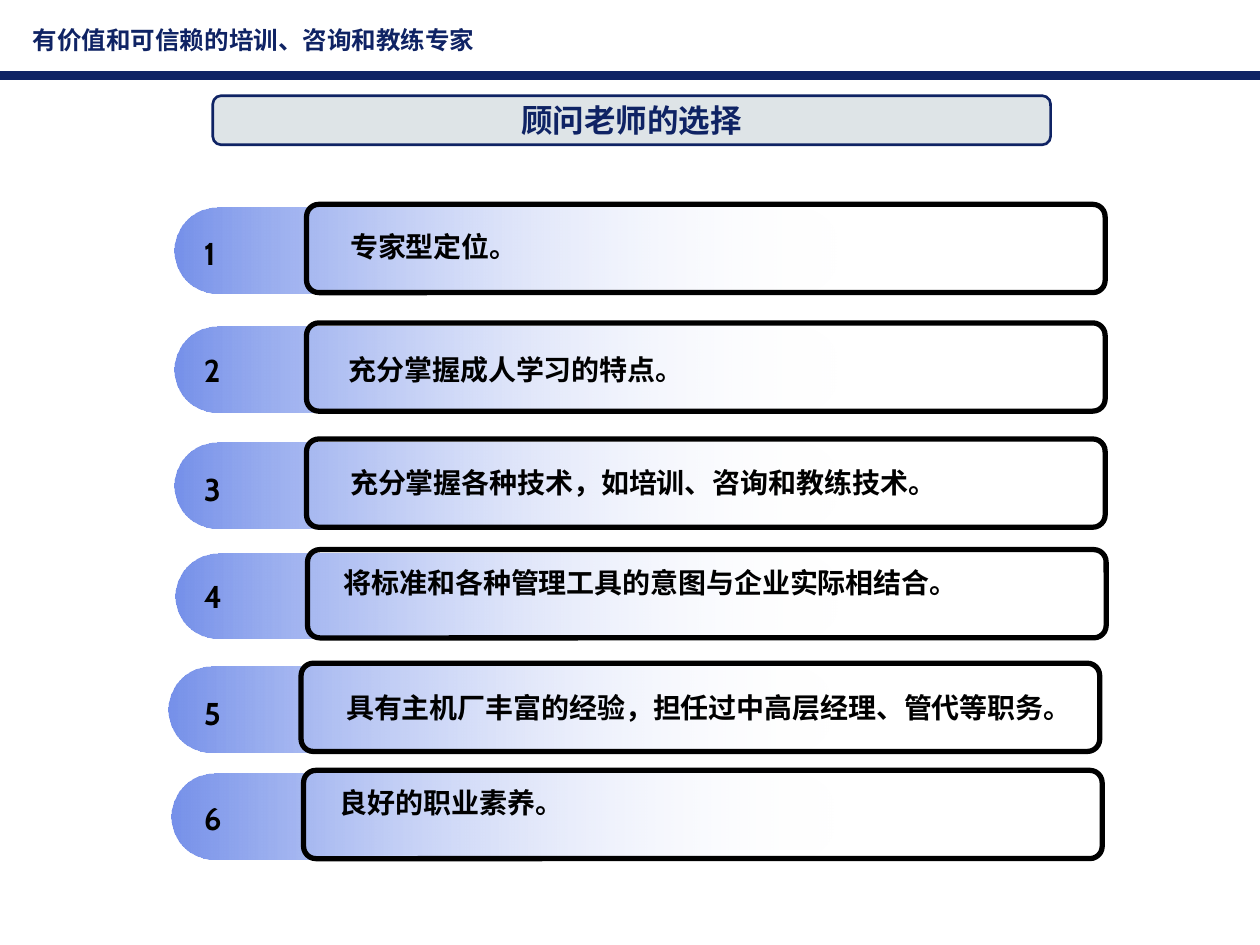
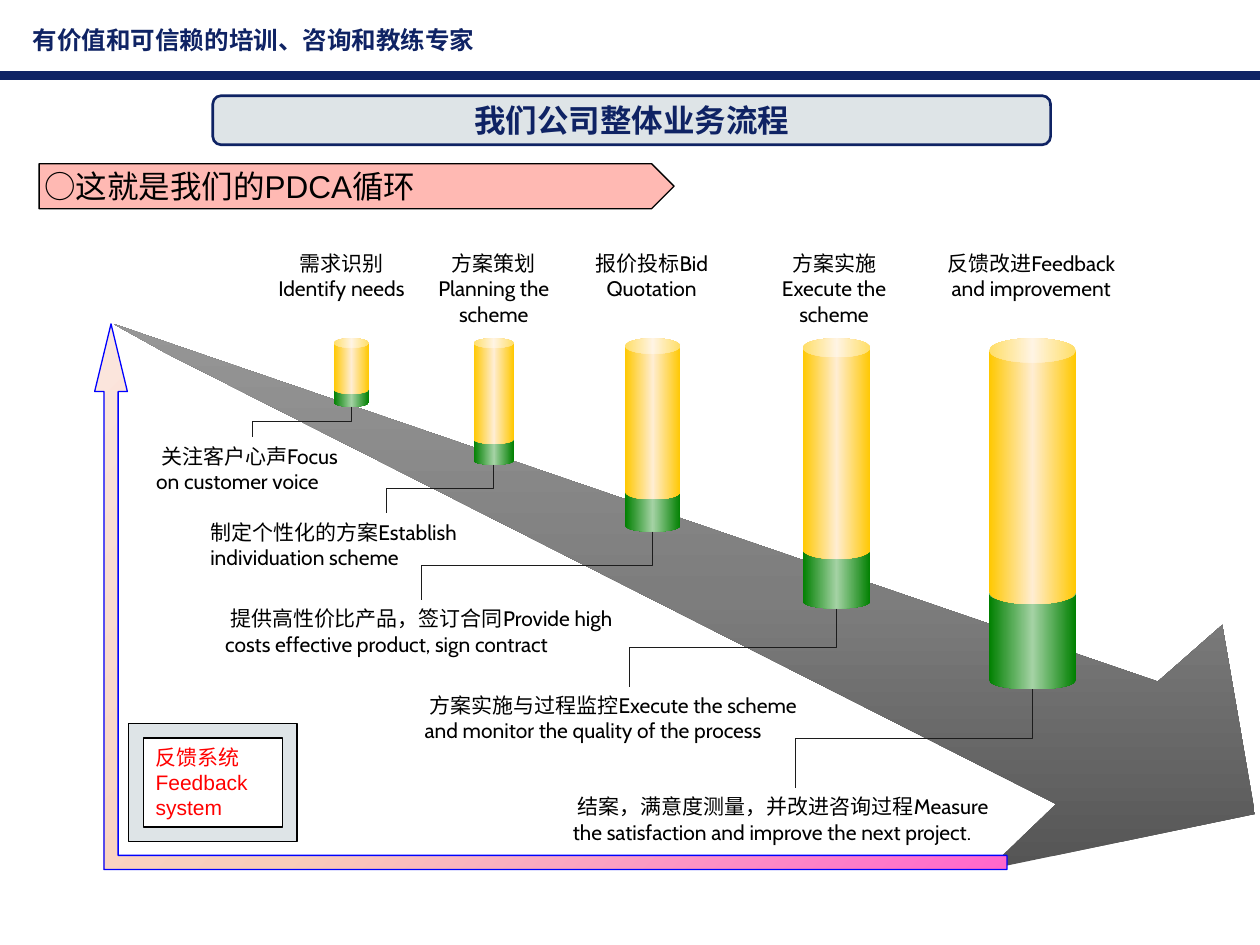
from typing import NamedTuple

from pptx import Presentation
from pptx.dml.color import RGBColor
from pptx.enum.shapes import MSO_CONNECTOR as CONN, MSO_SHAPE as SHAPE
from pptx.enum.text import MSO_ANCHOR as ANCHOR, PP_ALIGN as ALIGN
from pptx.oxml import parse_xml
from pptx.oxml.ns import nsdecls, qn
from pptx.util import Cm, Pt

COLORS = {
    "navy": "0F2364", "black": "000000", "white": "FFFFFF", "red": "FF0000",
    "blue": "0000FF", "panel": "DEE4E7", "salmon": "FFB9B3", "wire": "1C1C1C",
    "pill": "7691EA", "green": "008000", "mint": "A4D2A4",
    "gold": "FFC800", "cream": "FFEDD2", "dark": "555555", "mid": "7D7D7D",
    "light": "969696", "pink": "FF66CC", "peach": "F8CDBA", "blush": "FBE6DE",
}
CJK = "Noto Sans CJK SC"
PILL_SIZE = (13.41, 1.73)
FRAME_SIZE = (16.1, 1.78)
FRAME_OFFSET = (2.67, -0.07)
NUMBER_LEFT = 3.86
HEADING_TOP = 4.93
CAN_TOP = 6.82
NOTE_HEIGHT = 1.3


class Gradient(NamedTuple):
    stops: tuple[str, ...]
    angle: int | None = 0
    fade: bool = False


class Choice(NamedTuple):
    text: str
    left: float
    top: float
    text_left: float
    text_top: float
    number_top: float


class Step(NamedTuple):
    heading: str
    heading_left: float
    heading_width: float
    left: float
    width: float
    gold_height: float
    gold_adj: float
    green_top: float
    green_height: float
    green_adj: float
    note: str
    note_left: float
    note_top: float
    note_width: float
    note_indent: float = 0.1


PILL = Gradient(("pill", "white"), fade=True)
GREEN = Gradient(("green", "mint", "green"))
GOLD = Gradient(("gold", "cream", "gold"))
ROAD = Gradient(("dark", "mid", "light"), 270)
FEEDBACK = Gradient(("pink", "peach", "blush"), None)

CHOICES = [
    Choice("专家型定位。", 3.51, 4.19, 6.81, 4.5, 4.6),
    Choice("充分掌握成人学习的特点。", 3.51, 6.58, 6.78, 6.99, 6.96),
    Choice("充分掌握各种技术，如培训、咨询和教练技术。", 3.51, 8.92, 6.81, 9.27, 9.35),
    Choice("将标准和各种管理工具的意图与企业实际相结合。", 3.53, 11.15, 6.68, 11.28, 11.51),
    Choice("具有主机厂丰富的经验，担任过中高层经理、管代等职务。", 3.4, 13.44, 6.73, 13.79, 13.87),
    Choice("良好的职业素养。", 3.45, 15.6, 6.6, 15.72, 15.98),
]

STEPS = [
    Step("需求识别Identify needs", 5.31, 3.15, 6.73, 0.71, 1.12, 0.27, 7.77, 0.43, 0.4,
         "关注客户心声Focus on customer voice", 2.9, 8.81, 4.39),
    Step("方案策划Planning the scheme", 8.43, 3.05, 9.55, 0.81, 2.13, 0.24, 8.79, 0.58, 0.27,
         "制定个性化的方案Establish individuation scheme", 3.99, 10.34, 7.59, 0),
    Step("报价投标Bid Quotation", 11.73, 2.82, 12.6, 1.12, 3.25, 0.28, 9.75, 0.97, 0.25,
         "提供高性价比产品，签订合同Provide high costs effective product, sign contract",
         4.29, 12.09, 8.41),
    Step("方案实施Execute the scheme", 15.14, 3.35, 16.18, 1.37, 4.45, 0.28, 10.95, 1.32, 0.22,
         "方案实施与过程监控Execute the scheme and monitor the quality of the process",
         8.31, 13.84, 8.76),
    Step("反馈改进Feedback and improvement", 18.49, 4.6, 19.94, 1.75, 5.36, 0.28, 11.79, 2.11, 0.21,
         "结案，满意度测量，并改进咨询过程Measure the satisfaction and improve the next project.",
         11.3, 15.88, 9.47),
]

ROAD_POINTS = [
    (4.5, 7.29), (2.29, 6.53), (3.33, 7.11), (21.29, 16.21),
    (19.91, 17.53), (25.3, 16.41), (24.64, 12.6), (23.34, 13.74),
]


def rgb(name: str) -> RGBColor:
    return RGBColor.from_string(COLORS[name])


def apply_gradient(sp, grad: Gradient) -> None:
    last = len(grad.stops) - 1
    stops = ""
    for i, name in enumerate(grad.stops):
        alpha = '<a:alpha val="0"/>' if grad.fade and i == last else ""
        stops += (f'<a:gs pos="{i * 100000 // last}">'
                  f'<a:srgbClr val="{COLORS[name]}">{alpha}</a:srgbClr></a:gs>')
    if grad.angle is None:
        shade = '<a:path path="circle"><a:fillToRect l="100000" t="100000"/></a:path>'
    else:
        shade = f'<a:lin ang="{grad.angle * 60000}" scaled="0"/>'
    sp.fill.background()
    spPr = sp.element.spPr
    spPr.replace(spPr.find(qn("a:noFill")), parse_xml(
        f'<a:gradFill {nsdecls("a")} rotWithShape="1"><a:gsLst>{stops}</a:gsLst>{shade}</a:gradFill>'))


def style(sp, fill: str | Gradient | None, line: str | None = None, weight: float = 0.75) -> None:
    sp.shadow.inherit = False
    if isinstance(fill, Gradient):
        apply_gradient(sp, fill)
    elif fill:
        sp.fill.solid()
        sp.fill.fore_color.rgb = rgb(fill)
    else:
        sp.fill.background()
    if line:
        sp.line.color.rgb = rgb(line)
        sp.line.width = Pt(weight)
    else:
        sp.line.fill.background()


def add_preset(s, kind, left: float, top: float, width: float, height: float,
               fill=None, line: str | None = None, weight: float = 0.75, adj: tuple = ()):
    sp = s.shapes.add_shape(kind, Cm(left), Cm(top), Cm(width), Cm(height))
    for i, value in enumerate(adj):
        sp.adjustments[i] = value
    style(sp, fill, line, weight)
    return sp


def write(sp, text: str, *, size: float, font: str = "Cabin", color: str = "black",
          bold: bool = False, align=ALIGN.LEFT, anchor=ANCHOR.TOP,
          indent: float = 0, tight: bool = False) -> None:
    tf = sp.text_frame
    tf.word_wrap = True
    tf.vertical_anchor = anchor
    if tight:
        tf.margin_left = tf.margin_right = Cm(0.1)
    p = tf.paragraphs[0]
    p.alignment = align
    if indent:
        p._p.get_or_add_pPr().set("indent", str(Cm(indent)))
    r = p.add_run()
    r.text = text
    r.font.size = Pt(size)
    r.font.bold = bold
    r.font.name = font
    r.font.color.rgb = rgb(color)
    ea = parse_xml(f'<a:ea {nsdecls("a")} typeface="{CJK}"/>')
    r.font._element.find(qn("a:latin")).addnext(ea)


def add_text(s, text: str, left: float, top: float, width: float, height: float, **fmt) -> None:
    write(s.shapes.add_textbox(Cm(left), Cm(top), Cm(width), Cm(height)), text, **fmt)


def add_line(s, kind, x1: float, y1: float, x2: float, y2: float, color: str, weight: float):
    c = s.shapes.add_connector(kind, Cm(x1), Cm(y1), Cm(x2), Cm(y2))
    c.line.color.rgb = rgb(color)
    c.line.width = Pt(weight)
    c.element.spPr.append(parse_xml(f'<a:effectLst {nsdecls("a")}/>'))
    return c


def add_drop(s, x1: float, y1: float, x2: float, y2: float) -> None:
    mid_x, mid_y = (x1 + x2) / 2, (y1 + y2) / 2
    half_w, half_h = (y2 - y1) / 2, (x1 - x2) / 2
    c = add_line(s, CONN.ELBOW, mid_x - half_w, mid_y - half_h,
                 mid_x + half_w, mid_y + half_h, "wire", 0.75)
    c.element.spPr.find(qn("a:xfrm")).set("rot", str(90 * 60000))


def new_slide(prs):
    s = prs.slides.add_slide(prs.slide_layouts[6])
    add_line(s, CONN.STRAIGHT, 0, 1.52, 25.4, 1.52, "navy", 5)
    add_text(s, "有价值和可信赖的培训、咨询和教练专家", 0.41, 0.38, 9.5, 0.86,
             size=14, font="Arial", color="navy", bold=True)
    return s


def add_title(s, text: str) -> None:
    sp = add_preset(s, SHAPE.ROUNDED_RECTANGLE, 4.29, 1.93, 16.89, 0.99,
                    "panel", "navy", 1.5, (0.17,))
    write(sp, text, size=18, font=CJK, color="navy", bold=True,
          align=ALIGN.CENTER, anchor=ANCHOR.MIDDLE, tight=True)


def build_choices(prs) -> None:
    s = new_slide(prs)
    for number, c in enumerate(CHOICES, 1):
        add_preset(s, SHAPE.ROUNDED_RECTANGLE, c.left, c.top, *PILL_SIZE, PILL, adj=(0.5,))
        add_text(s, c.text, c.text_left, c.text_top, 15.5, 0.94, size=16, bold=True)
        add_preset(s, SHAPE.ROUNDED_RECTANGLE, c.left + FRAME_OFFSET[0], c.top + FRAME_OFFSET[1],
                   *FRAME_SIZE, line="black", weight=3, adj=(0.14,))
        add_text(s, str(number), NUMBER_LEFT, c.number_top, 0.9, 0.94, size=18, bold=True)
    add_title(s, "顾问老师的选择")


def build_process(prs) -> None:
    s = new_slide(prs)
    points = [(Cm(x), Cm(y)) for x, y in ROAD_POINTS]
    road = s.shapes.build_freeform(*points[0])
    road.add_line_segments(points[1:], close=True)
    style(road.convert_to_shape(), ROAD)

    for st in STEPS:
        add_preset(s, SHAPE.CAN, st.left, st.green_top, st.width, st.green_height,
                   GREEN, adj=(st.green_adj,))
        add_text(s, st.heading, st.heading_left, HEADING_TOP, st.heading_width, 1.8,
                 size=12, align=ALIGN.CENTER)
        add_text(s, st.note, st.note_left, st.note_top, st.note_width, NOTE_HEIGHT,
                 size=12, indent=st.note_indent)
        add_drop(s, st.left + st.width / 2, st.green_top + st.green_height,
                 st.note_left + st.note_width / 2, st.note_top)
        add_preset(s, SHAPE.CAN, st.left, CAN_TOP, st.width, st.gold_height,
                   GOLD, adj=(st.gold_adj,))

    loop = add_preset(s, SHAPE.BENT_UP_ARROW, 1.91, 6.53, 18.39, 11,
                      FEEDBACK, "blue", adj=(0.026, 0.03, 0.124))
    loop.element.spPr.find(qn("a:xfrm")).set("flipH", "1")
    system = add_preset(s, SHAPE.FRAME, 2.59, 14.58, 3.4, 2.39, "panel", "black")
    write(system, "反馈系统Feedback system", size=12, font="Arial", color="red")
    add_title(s, "我们公司整体业务流程")
    banner = add_preset(s, SHAPE.PENTAGON, 0.79, 3.3, 12.8, 0.91, "salmon", "black")
    write(banner, "○这就是我们的PDCA循环", size=18, font="Arial",
          anchor=ANCHOR.MIDDLE, tight=True)


def main() -> None:
    prs = Presentation()
    prs.slide_width, prs.slide_height = Cm(25.4), Cm(19.05)
    build_choices(prs)
    build_process(prs)
    prs.save("out.pptx")


if __name__ == "__main__":
    main()
